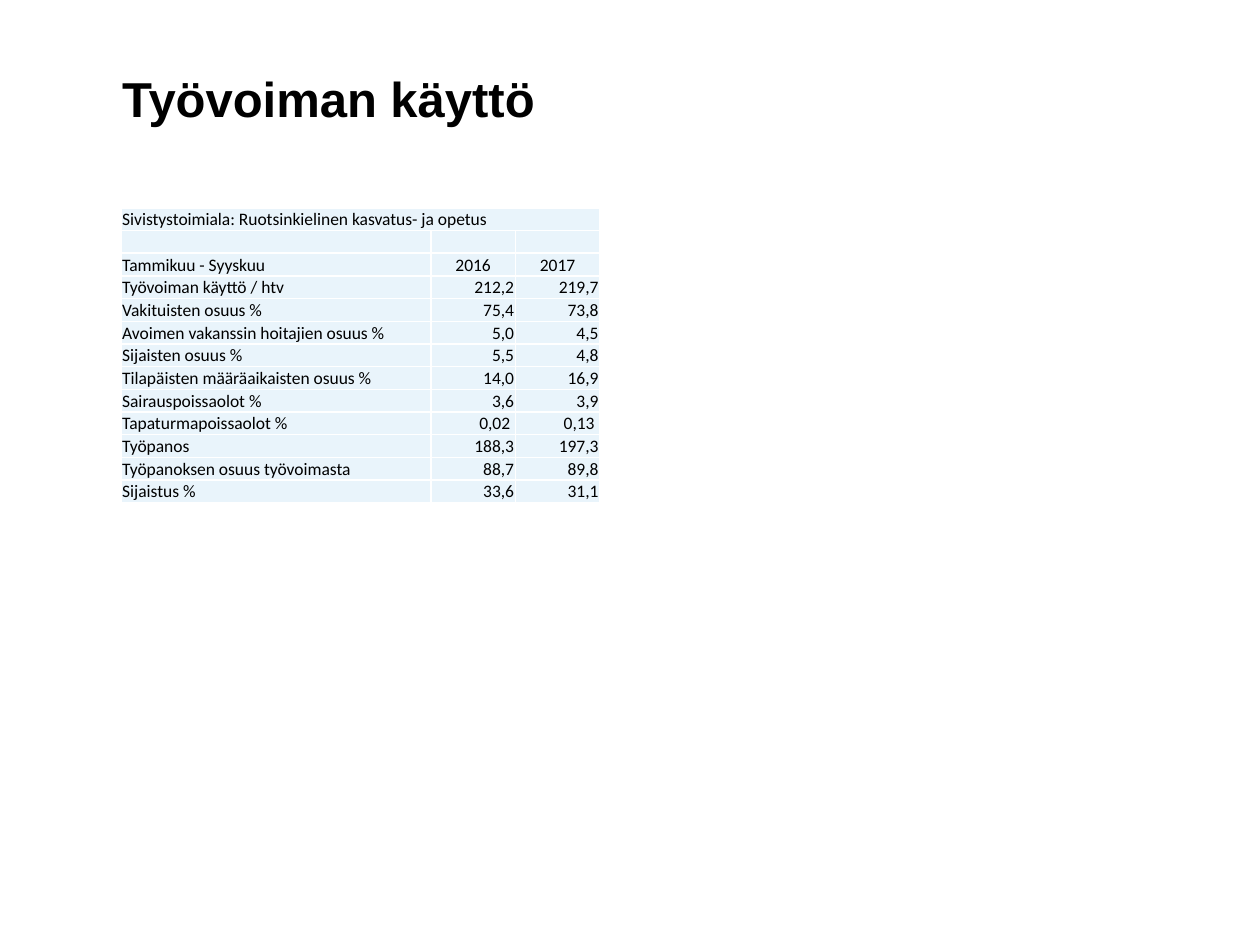
from lxml import etree
from pptx import Presentation
from pptx.dml.color import RGBColor
from pptx.enum.text import MSO_ANCHOR, PP_ALIGN
from pptx.oxml.ns import qn
from pptx.util import Inches, Pt

LEFT, MID, RIGHT = PP_ALIGN.LEFT, PP_ALIGN.CENTER, PP_ALIGN.RIGHT
TOP, BOTTOM = MSO_ANCHOR.TOP, MSO_ANCHOR.BOTTOM
BLACK = RGBColor(0x00, 0x00, 0x00)
WHITE = RGBColor(0xFF, 0xFF, 0xFF)
PALE = RGBColor(0xE9, 0xF4, 0xFB)

TITLE = "Työvoiman käyttö"
ROWS = [
    ("Sivistystoimiala: Ruotsinkielinen kasvatus- ja opetus", "", ""),
    ("", "", ""),
    ("Tammikuu - Syyskuu", "2016", "2017"),
    ("Työvoiman käyttö / htv", "212,2", "219,7"),
    ("Vakituisten osuus %", "75,4", "73,8"),
    ("Avoimen vakanssin hoitajien osuus %", "5,0", "4,5"),
    ("Sijaisten osuus %", "5,5", "4,8"),
    ("Tilapäisten määräaikaisten osuus %", "14,0", "16,9"),
    ("Sairauspoissaolot %", "3,6", "3,9"),
    ("Tapaturmapoissaolot %", "0,02 ", "0,13 "),
    ("Työpanos", "188,3", "197,3"),
    ("Työpanoksen osuus työvoimasta", "88,7", "89,8"),
    ("Sijaistus %", "33,6", "31,1"),
]
HEAD = 2  # row with the years
COLS = [2.46, 0.67, 0.67]
ROW_H = 0.18


def style(para, name, size, bold=False):
    font = para.font
    font.name, font.size, font.bold = name, Pt(size), bold
    font.color.rgb = BLACK


def add_title(slide, left, top, width, height):
    box = slide.shapes.add_textbox(
        Inches(left), Inches(top), Inches(width), Inches(height))
    frame = box.text_frame
    frame.word_wrap = True
    frame.vertical_anchor = TOP
    frame.margin_left = frame.margin_right = 0
    frame.margin_top = frame.margin_bottom = 0
    para = frame.paragraphs[0]
    para.text = TITLE
    para.line_spacing = Pt(33)
    style(para, "Arial", 28, True)


def add_edges(cell):
    # Thin white line on all four sides, ahead of the fill
    props = cell._tc.get_or_add_tcPr()
    for spot, side in enumerate(("a:lnL", "a:lnR", "a:lnT", "a:lnB")):
        line = etree.Element(qn(side), w=str(Pt(1)))
        fill = etree.SubElement(line, qn("a:solidFill"))
        etree.SubElement(fill, qn("a:srgbClr"), val=str(WHITE))
        props.insert(spot, line)


def fill_cell(cell, text, align):
    cell.margin_left = cell.margin_right = cell.margin_top = Inches(0.01)
    cell.margin_bottom = 0
    cell.vertical_anchor = BOTTOM
    cell.fill.solid()
    cell.fill.fore_color.rgb = PALE
    add_edges(cell)
    para = cell.text_frame.paragraphs[0]
    para.alignment = align
    if text:
        para.text = text
    else:
        # Keeps empty rows as low as the others
        para._p.get_or_add_endParaRPr().set("sz", "1000")
    style(para, "Calibri", 10)


def add_figures(slide, left, top):
    frame = slide.shapes.add_table(
        len(ROWS), len(COLS), Inches(left), Inches(top),
        Inches(sum(COLS)), Inches(ROW_H * len(ROWS)))
    table = frame.table
    table.first_row = table.horz_banding = False
    for col, width in zip(table.columns, COLS):
        col.width = Inches(width)
    for r, row in enumerate(ROWS):
        table.rows[r].height = Inches(ROW_H)
        for c, text in enumerate(row):
            align = LEFT if c == 0 else MID if r == HEAD else RIGHT
            fill_cell(table.cell(r, c), text, align)
    table.cell(0, 0).merge(table.cell(0, len(COLS) - 1))


def main():
    deck = Presentation()
    deck.slide_width, deck.slide_height = Inches(10), Inches(7.5)
    slide = deck.slides.add_slide(deck.slide_layouts[6])
    add_title(slide, 0.97, 0.55, 3.79, 1.09)
    add_figures(slide, 0.96, 1.65)
    deck.save("out.pptx")


if __name__ == "__main__":
    main()
